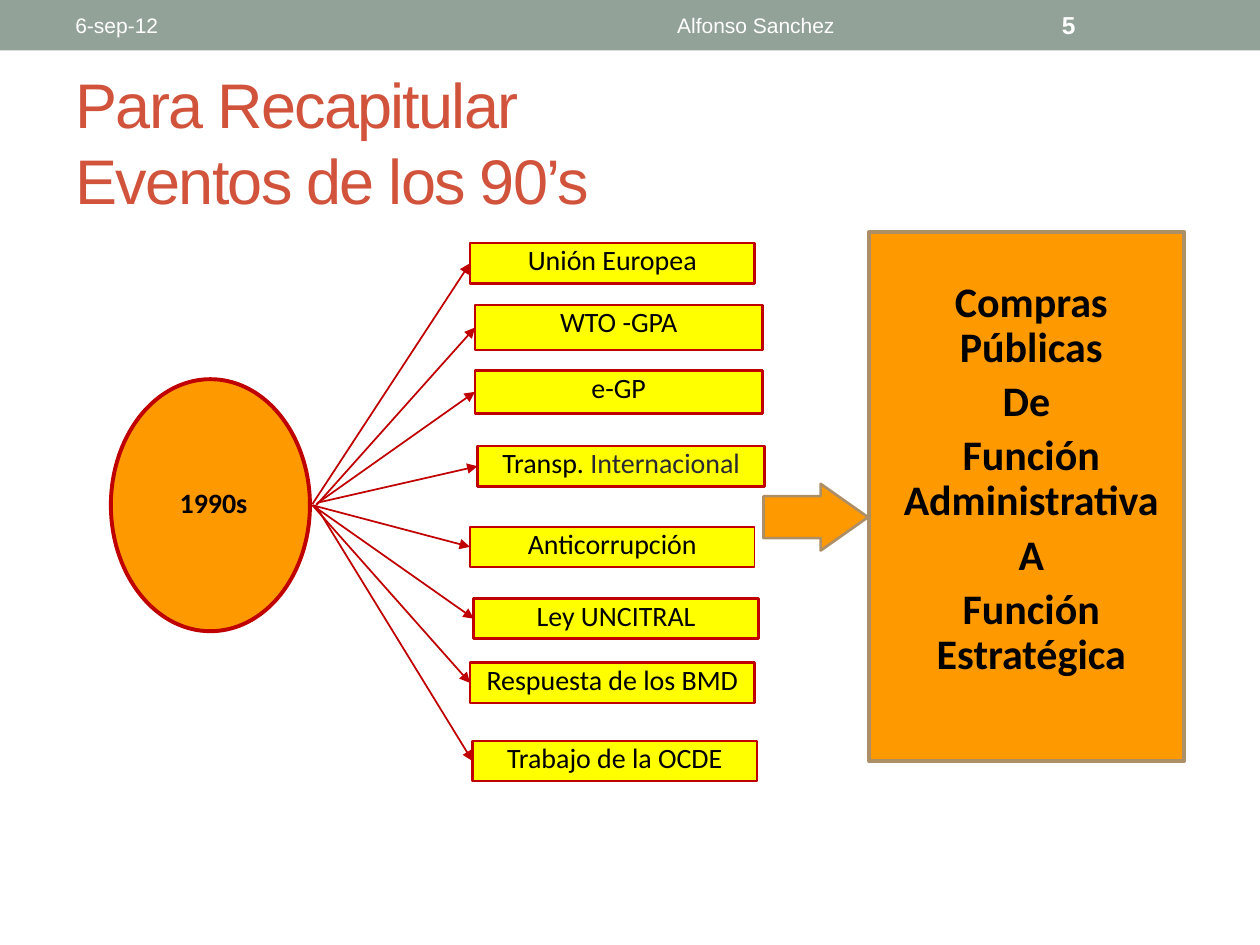
from lxml import etree
from pptx import Presentation
from pptx.dml.color import RGBColor
from pptx.enum.shapes import MSO_CONNECTOR, MSO_SHAPE
from pptx.enum.text import MSO_ANCHOR, MSO_AUTO_SIZE, PP_ALIGN
from pptx.oxml.ns import qn
from pptx.util import Inches, Pt

STRAIGHT = MSO_CONNECTOR.STRAIGHT
RECTANGLE, OVAL, ARROW = MSO_SHAPE.RECTANGLE, MSO_SHAPE.OVAL, MSO_SHAPE.RIGHT_ARROW
TOP, MIDDLE = MSO_ANCHOR.TOP, MSO_ANCHOR.MIDDLE
LEFT, CENTER = PP_ALIGN.LEFT, PP_ALIGN.CENTER
NO_RESIZE = MSO_AUTO_SIZE.NONE

SAGE = RGBColor(0x93, 0xA2, 0x99)
BRICK = RGBColor(0xD2, 0x53, 0x3C)
ORANGE = RGBColor(0xFF, 0x99, 0x00)
YELLOW = RGBColor(0xFF, 0xFF, 0x00)
RED = RGBColor(0xC0, 0x00, 0x00)
TAN = RGBColor(0xAD, 0x8F, 0x67)
BLACK = RGBColor(0x00, 0x00, 0x00)
INK = RGBColor(0x29, 0x29, 0x34)
WHITE = RGBColor(0xFF, 0xFF, 0xFF)

SLIDE_WIDTH, SLIDE_HEIGHT = 10, 7.5
HEADER_HEIGHT = 0.4
TITLE_LINES = ["Para Recapitular", "Eventos de los 90’s"]
HEADER_ITEMS = [
    ("6-sep-12", 0.5, 3.17, LEFT, 12, False),
    ("Alfonso Sanchez", 3.75, 4.5, CENTER, 12, False),
    ("5", 8.33, 1.17, LEFT, 14, True),
]
DECADE = " 1990s"
EVENTS = [
    ([("Unión Europea", BLACK)], (3.73, 1.93, 2.26, 0.32), 1.5, (2.48, 4)),
    ([("WTO -GPA", BLACK)], (3.77, 2.42, 2.28, 0.36), 1.5, (2.51, 4.01)),
    ([("e-GP", BLACK)], (3.77, 2.94, 2.28, 0.34), 1.5, (2.51, 4)),
    ([("Transp. ", BLACK), ("Internacional", INK)], (3.79, 3.54, 2.28, 0.32), 1.5, (2.52, 3.99)),
    ([("Anticorrupción", BLACK)], (3.73, 4.18, 2.26, 0.32), 1, (2.48, 4.01)),
    ([("Ley UNCITRAL", BLACK)], (3.76, 4.75, 2.26, 0.32), 1.5, (2.48, 4.01)),
    ([("Respuesta de los BMD", BLACK)], (3.73, 5.26, 2.26, 0.32), 1.5, (2.48, 4.01)),
    ([("Trabajo de la OCDE", BLACK)], (3.75, 5.88, 2.26, 0.32), 1.5, (2.51, 4.02)),
]
OUTCOME = ["Compras Públicas", "De ", "Función Administrativa", "A", "Función Estratégica"]


def add_run(paragraph, text, size, color, font="Calibri", bold=False):
    run = paragraph.add_run()
    run.text = text
    run.font.name, run.font.size, run.font.bold = font, Pt(size), bold
    run.font.color.rgb = color
    return run


def prepare_frame(shape, anchor):
    frame = shape.text_frame
    frame.word_wrap, frame.auto_size, frame.vertical_anchor = True, NO_RESIZE, anchor
    return frame


def set_paragraph(paragraph, alignment, spacing=1.0, before=0):
    paragraph.alignment, paragraph.line_spacing = alignment, spacing
    paragraph.space_before = Pt(before)
    return paragraph


def add_block(slide, kind, box, fill, line=None, width=0):
    shape = slide.shapes.add_shape(kind, *map(Inches, box))
    shape.shadow.inherit = False
    shape.fill.solid()
    shape.fill.fore_color.rgb = fill
    if line is None:
        shape.line.fill.background()
    else:
        shape.line.color.rgb, shape.line.width = line, Pt(width)
    return shape


def add_arrow_line(slide, start, target):
    connector = slide.shapes.add_connector(STRAIGHT, *map(Inches, start + start))
    connector.end_connect(target, 1)
    connector.line.color.rgb, connector.line.width = RED, Pt(1)
    etree.SubElement(connector.line._get_or_add_ln(), qn("a:tailEnd"), type="triangle")
    etree.SubElement(connector._element.spPr, qn("a:effectLst"))


def add_title(slide):
    title = slide.shapes.title
    title.left, title.top, title.width, title.height = map(Inches, (0.5, 0.58, 9, 1.08))
    paragraph = set_paragraph(prepare_frame(title, MIDDLE).paragraphs[0], LEFT)
    for index, text in enumerate(TITLE_LINES):
        if index:
            paragraph.add_line_break()
        run = add_run(paragraph, text, 36, BRICK, "Arial")
        run.font._element.set("spc", "-100")


def add_header(slide):
    add_block(slide, RECTANGLE, (0, 0, SLIDE_WIDTH, HEADER_HEIGHT), SAGE)
    for text, left, width, alignment, size, bold in HEADER_ITEMS:
        item = slide.shapes.add_textbox(*map(Inches, (left, 0.02, width, 0.36)))
        paragraph = set_paragraph(prepare_frame(item, MIDDLE).paragraphs[0], alignment)
        add_run(paragraph, text, size, WHITE, "Arial", bold)


def add_decade(slide):
    decade = add_block(slide, OVAL, (0.88, 3.01, 1.58, 2), ORANGE, RED, 2.25)
    paragraph = set_paragraph(prepare_frame(decade, MIDDLE).paragraphs[0], CENTER, 0.8)
    add_run(paragraph, DECADE, 16, BLACK, bold=True)


def add_outcome(slide):
    add_block(slide, RECTANGLE, (6.9, 1.84, 2.5, 4.2), ORANGE, TAN, 2.25)
    label = slide.shapes.add_textbox(*map(Inches, (6.98, 2.18, 2.41, 3.33)))
    frame = prepare_frame(label, TOP)
    for index, text in enumerate(OUTCOME):
        paragraph = frame.add_paragraph() if index else frame.paragraphs[0]
        set_paragraph(paragraph, CENTER, 0.9, 5 if index else 0)
        add_run(paragraph, text, 24, BLACK, bold=True)
    arrow = add_block(slide, ARROW, (6.06, 3.84, 0.83, 0.53), ORANGE, TAN, 1.5)
    arrow.adjustments[0], arrow.adjustments[1] = 0.63, 0.71


def add_events(slide):
    for runs, box, width, start in EVENTS:
        event = add_block(slide, RECTANGLE, box, YELLOW, RED, width)
        paragraph = set_paragraph(prepare_frame(event, TOP).paragraphs[0], CENTER, 0.8)
        for text, color in runs:
            add_run(paragraph, text, 16, color)
        add_arrow_line(slide, start, event)


def main():
    """Build the slide on the events of the 1990s and their outcome."""
    presentation = Presentation()
    presentation.slide_width = Inches(SLIDE_WIDTH)
    presentation.slide_height = Inches(SLIDE_HEIGHT)
    slide = presentation.slides.add_slide(presentation.slide_layouts[5])
    add_title(slide)
    add_header(slide)
    add_decade(slide)
    add_outcome(slide)
    add_events(slide)
    presentation.save("out.pptx")


if __name__ == "__main__":
    main()
